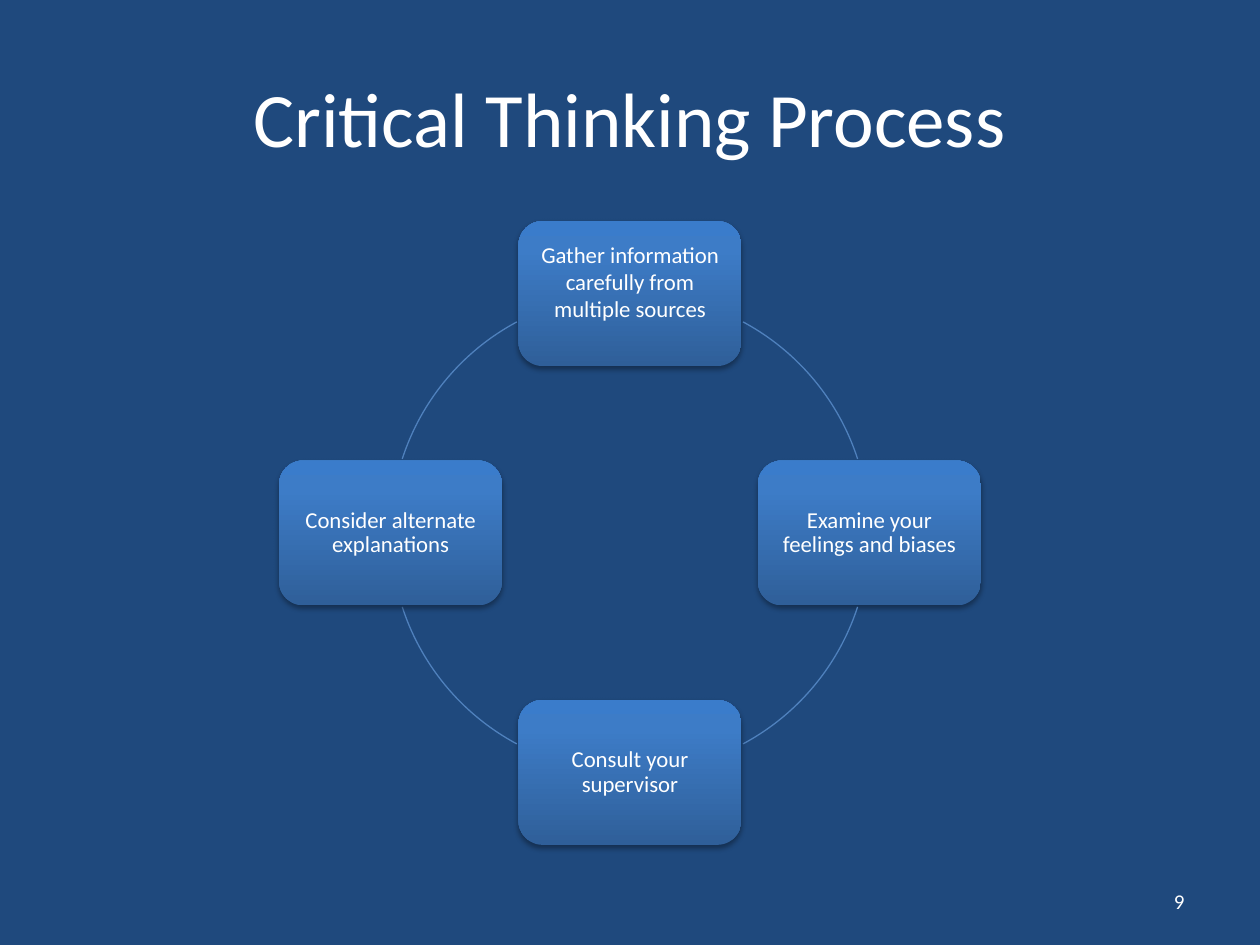
from copy import deepcopy

from lxml import etree
from pptx import Presentation
from pptx.dml.color import RGBColor
from pptx.enum.shapes import MSO_SHAPE
from pptx.enum.text import MSO_ANCHOR, PP_ALIGN
from pptx.oxml.ns import qn
from pptx.util import Inches, Pt

NAVY = RGBColor(0x1F, 0x49, 0x7D)
WHITE = RGBColor(0xFF, 0xFF, 0xFF)
BLUE = RGBColor(0x4F, 0x81, 0xBD)
SHADES = [(0, RGBColor(0x2F, 0x5F, 0x99)),
          (0.8, RGBColor(0x3D, 0x7C, 0xC7)),
          (1, RGBColor(0x3A, 0x7C, 0xCB))]
ROUND, ARC = MSO_SHAPE.ROUNDED_RECTANGLE, MSO_SHAPE.ARC
MIDDLE = MSO_ANCHOR.MIDDLE
CENTER, RIGHT = PP_ALIGN.CENTER, PP_ALIGN.RIGHT


def write(frame, text, size, align):
    frame.text = text
    frame.word_wrap = True
    frame.vertical_anchor = MIDDLE
    par = frame.paragraphs[0]
    par.alignment = align
    par.font.name = "Calibri"
    par.font.size = Pt(size)
    par.font.color.rgb = WHITE
    return par


def shade(shape):
    """Fill with the three-stop gradient and cast a soft shadow."""
    shape.fill.gradient()
    shape.fill.gradient_angle = 90
    stops = shape._element.spPr.find(".//" + qn("a:gsLst"))
    stops.append(deepcopy(stops[-1]))
    for stop, (pos, color) in zip(shape.fill.gradient_stops, SHADES):
        stop.position = pos
        stop.color.rgb = color
    shape.shadow.inherit = False
    effects = shape._element.spPr.find(qn("a:effectLst"))
    outer = etree.SubElement(effects, qn("a:outerShdw"), blurRad=str(Pt(3.1)),
                             dist=str(Pt(1.8)), dir="5400000", rotWithShape="0")
    black = etree.SubElement(outer, qn("a:srgbClr"), val="000000")
    etree.SubElement(black, qn("a:alpha"), val="35000")


prs = Presentation()
prs.slide_width, prs.slide_height = Inches(10), Inches(7.5)
slide = prs.slides.add_slide(prs.slide_layouts[5])
slide.background.fill.solid()
slide.background.fill.fore_color.rgb = NAVY

# Title
title = slide.shapes.title
title.left, title.top = Inches(0.5), Inches(0.3)
title.width, title.height = Inches(9), Inches(1.25)
write(title.text_frame, "Critical Thinking Process", 44, CENTER)

# Cycle: four steps clockwise from the top, each followed by an arc
MID_X, MID_Y, RADIUS = 5, 4.23, 1.9
WIDE, HIGH = 1.77, 1.15
STEPS = [
    ("Gather information carefully from multiple sources", 0, -1, (298.2, 342)),
    ("Examine your feelings and biases", 1, 0, (18, 61.8)),
    ("Consult your supervisor", 0, 1, (118.2, 162)),
    ("Consider alternate explanations", -1, 0, (198, 241.8)),
]
for text, dx, dy, angles in STEPS:
    box = slide.shapes.add_shape(
        ROUND, Inches(MID_X + dx * RADIUS - WIDE / 2),
        Inches(MID_Y + dy * RADIUS - HIGH / 2), Inches(WIDE), Inches(HIGH))
    box.line.fill.background()
    shade(box)
    frame = box.text_frame
    frame.margin_left = frame.margin_right = Inches(0.05)
    frame.margin_top = frame.margin_bottom = Inches(0.05)
    par = write(frame, text, 13, CENTER)
    if dy == -1:
        frame.margin_bottom = Inches(0.24)  # the first step sits higher
    else:
        par.line_spacing = 0.9

    arc = slide.shapes.add_shape(
        ARC, Inches(MID_X - RADIUS), Inches(MID_Y - RADIUS),
        Inches(2 * RADIUS), Inches(2 * RADIUS))
    for i, angle in enumerate(angles):
        arc.adjustments[i] = angle * 0.6  # 60000 units per degree, over 100000
    arc.fill.background()
    arc.line.color.rgb = BLUE
    arc.line.width = Pt(0.75)
    arc.shadow.inherit = False

# Page number
page = slide.shapes.add_textbox(Inches(7.17), Inches(6.95), Inches(2.33), Inches(0.4))
write(page.text_frame, "9", 12, RIGHT)

prs.save("out.pptx")
